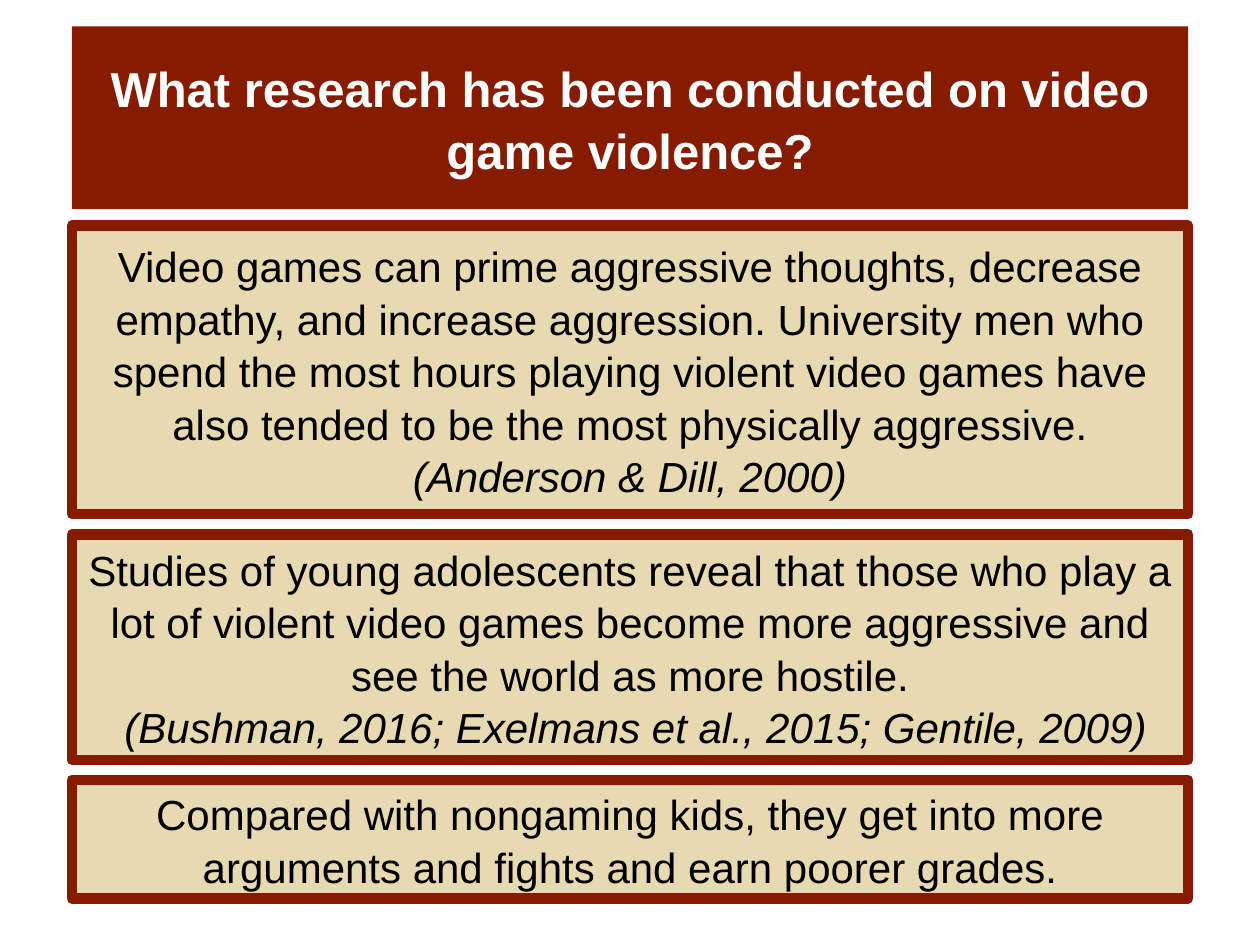
from dataclasses import dataclass

from pptx import Presentation
from pptx.dml.color import RGBColor
from pptx.enum.text import MSO_ANCHOR, MSO_AUTO_SIZE, PP_ALIGN
from pptx.oxml.ns import qn
from pptx.util import Inches, Pt

CENTER = PP_ALIGN.CENTER
MIDDLE = MSO_ANCHOR.MIDDLE
NO_AUTOFIT = MSO_AUTO_SIZE.NONE

RED = RGBColor(0x85, 0x1C, 0x00)
SAND = RGBColor(0xE7, 0xD9, 0xB1)
WHITE = RGBColor(0xFF, 0xFF, 0xFF)
BLACK = RGBColor(0x00, 0x00, 0x00)

LEFT, WIDTH = 0.57, 8.86
COMPARISON_LAYOUT = 4


@dataclass
class Finding:
    top: float
    height: float
    text: str
    citation: str = ""


FINDINGS = [
    Finding(1.79, 2.29,
            "Video games can prime aggressive thoughts, decrease empathy, and "
            "increase aggression. University men who spend the most hours playing "
            "violent video games have also tended to be the most physically aggressive.",
            "(Anderson & Dill, 2000)"),
    Finding(4.24, 1.79,
            "Studies of young adolescents reveal that those who play a lot of violent "
            "video games become more aggressive and see the world as more hostile.",
            " (Bushman, 2016; Exelmans et al., 2015; Gentile, 2009)"),
    Finding(6.19, 0.94,
            "Compared with nongaming kids, they get into more arguments and fights "
            "and earn poorer grades."),
]


def place_box(sp, top: float, height: float, fill: RGBColor) -> None:
    """Move a placeholder into the column and prepare its text frame."""
    sp.left, sp.top = Inches(LEFT), Inches(top)
    sp.width, sp.height = Inches(WIDTH), Inches(height)
    sp.fill.solid()
    sp.fill.fore_color.rgb = fill
    tf = sp.text_frame
    tf.word_wrap = True
    tf.auto_size = NO_AUTOFIT
    tf.vertical_anchor = MIDDLE


def write(p, text: str, *, size: float = 24, color: RGBColor = BLACK,
          bold: bool = False, italic: bool = False) -> None:
    """Fill a centred paragraph without bullet or indent."""
    p.alignment = CENTER
    p.line_spacing = 1.04
    p.space_before = p.space_after = Pt(0)
    pPr = p._p.get_or_add_pPr()
    pPr.set("marL", "0")
    pPr.set("indent", "0")
    pPr.append(pPr.makeelement(qn("a:buNone"), {}))
    r = p.add_run()
    r.text = text
    r.font.name = "Arial"
    r.font.size = Pt(size)
    r.font.bold = bold
    r.font.italic = italic
    r.font.color.rgb = color


def draw_finding(sp, finding: Finding) -> None:
    place_box(sp, finding.top, finding.height, SAND)
    sp.line.color.rgb = RED
    sp.line.width = Pt(6)
    tf = sp.text_frame
    write(tf.paragraphs[0], finding.text)
    if finding.citation:
        write(tf.add_paragraph(), finding.citation, italic=True)


def main() -> None:
    prs = Presentation()
    prs.slide_width, prs.slide_height = Inches(10), Inches(7.5)
    s = prs.slides.add_slide(prs.slide_layouts[COMPARISON_LAYOUT])

    # Title banner
    title = s.shapes.title
    place_box(title, 0.21, 1.45, RED)
    write(title.text_frame.paragraphs[0],
          "What research has been conducted on video game violence?",
          size=28, color=WHITE, bold=True)

    # Research findings
    bodies = list(s.placeholders)[1:]
    for sp, finding in zip(bodies, FINDINGS):
        draw_finding(sp, finding)

    # Unused placeholders
    for sp in bodies[len(FINDINGS):]:
        sp.element.getparent().remove(sp.element)

    prs.save("out.pptx")


if __name__ == "__main__":
    main()
